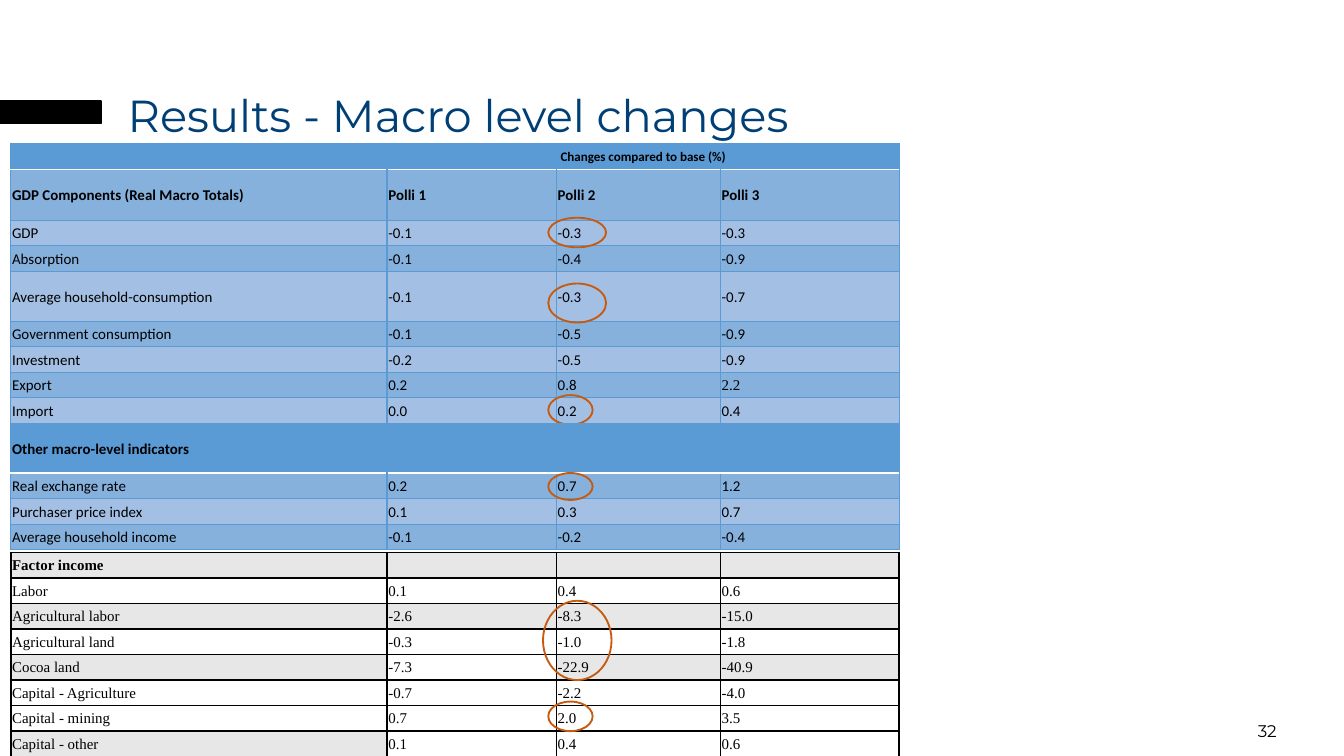
from lxml import etree
from pptx import Presentation
from pptx.dml.color import RGBColor
from pptx.enum.shapes import MSO_SHAPE
from pptx.enum.text import MSO_ANCHOR, MSO_AUTO_SIZE, PP_ALIGN
from pptx.oxml.ns import qn
from pptx.util import Inches, Pt

RECT, OVAL = MSO_SHAPE.RECTANGLE, MSO_SHAPE.OVAL
TOP, MIDDLE = MSO_ANCHOR.TOP, MSO_ANCHOR.MIDDLE
LEFT, CENTER, RIGHT, JUSTIFY = PP_ALIGN.LEFT, PP_ALIGN.CENTER, PP_ALIGN.RIGHT, PP_ALIGN.JUSTIFY
NO_FIT = MSO_AUTO_SIZE.NONE

THEME = {
    "title": {"name": "Montserrat", "size": 24, "color": "003F75"},
    "number": {"name": "Montserrat", "size": 9, "color": "000000"},
    "macro": {"name": "Calibri", "size": 8, "color": "000000"},
    "span": {"name": "Calibri", "size": 7, "color": "000000"},
    "factor": {"name": "Times New Roman", "size": 8, "color": "000000"},
    "black": "000000", "white": "FFFFFF", "grey": "E7E7E7",
    "blue": "5B9BD5", "mid": "86B1DD", "light": "A3C0E4", "ring": "C55A11",
}

TITLE = "Results - Macro level changes"
PAGE = "32"
SPAN_HEAD = "Changes compared to base (%)"
GDP = [
    ("", SPAN_HEAD, "", ""),
    ("GDP Components (Real Macro Totals)", "Polli 1", "Polli 2", "Polli 3"),
    ("GDP", "-0.1", "-0.3", "-0.3"),
    ("Absorption", "-0.1", "-0.4", "-0.9"),
    ("Average household-consumption", "-0.1", "-0.3", "-0.7"),
    ("Government consumption", "-0.1", "-0.5", "-0.9"),
    ("Investment", "-0.2", "-0.5", "-0.9"),
    ("Export", "0.2", "0.8", "2.2"),
    ("Import", "0.0", "0.2", "0.4"),
]
OTHER = [
    ("Other macro-level indicators", "", "", ""),
    ("Real exchange rate", "0.2", "0.7", "1.2"),
    ("Purchaser price index", "0.1", "0.3", "0.7"),
    ("Average household income", "-0.1", "-0.2", "-0.4"),
]
FACTOR = [
    ("Factor income", "", "", ""),
    ("Labor", "0.1", "0.4", "0.6"),
    ("Agricultural labor", "-2.6", "-8.3", "-15.0"),
    ("Agricultural land", "-0.3", "-1.0", "-1.8"),
    ("Cocoa land", "-7.3", "-22.9", "-40.9"),
    ("Capital - Agriculture", "-0.7", "-2.2", "-4.0"),
    ("Capital - mining", "0.7", "2.0", "3.5"),
    ("Capital - other", "0.1", "0.4", "0.6"),
]
CELL_FONTS = {SPAN_HEAD: THEME["span"], "2.2": THEME["factor"]}
FACTOR_GREY = {(r, c) for r in (0, 2, 4) for c in range(4)} - {(4, 1)} | {(7, 0)}
GDP_RINGS = [(4.08, 1.62, 0.43, 0.22), (4.08, 2.11, 0.43, 0.29), (4.08, 2.94, 0.33, 0.22)]
LOWER_RINGS = [(4.04, 4.47, 0.51, 0.59), (4.08, 5.22, 0.33, 0.22), (4.08, 3.52, 0.33, 0.2)]
COLS = (2.8, 1.26, 1.22, 1.33)
TABLE_LEFT, ROW = 0.08, 0.19


def write(tf, text, style, align, bold=False):
    p = tf.paragraphs[0]
    p.alignment = align
    if not text:
        end = etree.SubElement(p._p, qn("a:endParaRPr"))
        end.set("sz", str(style["size"] * 100))
        return
    r = p.add_run()
    r.text = text
    values = {"name": style["name"], "size": Pt(style["size"]), "bold": bold}
    for key, value in values.items():
        setattr(r.font, key, value)
    r.font.color.rgb = RGBColor.from_string(style["color"])


def frame(tf, margins):
    values = dict(zip(("margin_left", "margin_top", "margin_right", "margin_bottom"),
                      map(Inches, margins)))
    values.update(vertical_anchor=TOP, word_wrap=True, auto_size=NO_FIT)
    for key, value in values.items():
        setattr(tf, key, value)


def add_shape(s, kind, box, fill, line):
    sp = s.shapes.add_shape(kind, *map(Inches, box))
    sp.shadow.inherit = False
    if fill:
        sp.fill.solid()
        sp.fill.fore_color.rgb = RGBColor.from_string(fill)
    else:
        sp.fill.background()
    sp.line.color.rgb = RGBColor.from_string(line)
    sp.line.width = Pt(1)


def add_rings(s, rings):
    for box in rings:
        add_shape(s, OVAL, box, None, THEME["ring"])


def set_borders(cell, borders):
    tc_pr = cell._tc.get_or_add_tcPr()
    for side in "LRTB":
        color, width = borders[side]
        ln = etree.SubElement(tc_pr, qn("a:ln" + side), w=str(Pt(width)))
        fill = etree.SubElement(ln, qn("a:solidFill"))
        etree.SubElement(fill, qn("a:srgbClr"), val=color)


def macro_look(r, c):
    borders = dict.fromkeys("LRTB", (THEME["blue"], 0.5))
    if r == 0:
        borders["B"] = (THEME["white"], 1)
        return THEME["blue"], borders
    if r == 1:
        borders["T"] = (THEME["white"], 1)
    if c == 0:
        borders["R"] = (THEME["blue"], 1)
    if c == 1:
        borders["L"] = (THEME["blue"], 1)
    return THEME["mid" if r % 2 else "light"], borders


def factor_look(r, c):
    fill = THEME["grey" if (r, c) in FACTOR_GREY else "white"]
    return fill, dict.fromkeys("LRTB", (THEME["black"], 1))


def add_grid(s, rows, top, style, look, tall, bold_rows):
    heights = [tall.get(r, ROW) for r in range(len(rows))]
    table = s.shapes.add_table(len(rows), len(COLS), Inches(TABLE_LEFT), Inches(top),
                               Inches(sum(COLS)), Inches(sum(heights))).table
    table.first_row = table.horz_banding = False
    for col, width in zip(table.columns, COLS):
        col.width = Inches(width)
    for r, (row, height) in enumerate(zip(rows, heights)):
        table.rows[r].height = Inches(height)
        for c, text in enumerate(row):
            cell = table.cell(r, c)
            fill, borders = look(r, c)
            set_borders(cell, borders)
            cell.fill.solid()
            cell.fill.fore_color.rgb = RGBColor.from_string(fill)
            cell.margin_left = cell.margin_right = cell.margin_top = Inches(0.01)
            cell.margin_bottom = 0
            cell.vertical_anchor = MIDDLE
            align = CENTER if text == SPAN_HEAD else JUSTIFY
            write(cell.text_frame, text, CELL_FONTS.get(text, style), align, r in bold_rows)
    return table


def main():
    prs = Presentation()
    prs.slide_width = Inches(10)
    prs.slide_height = prs.slide_width * 9 // 16
    s = prs.slides.add_slide(prs.slide_layouts[5])

    number = s.shapes.add_textbox(*map(Inches, (8.99, 5.36, 0.51, 0.15)))
    frame(number.text_frame, (0, 0, 0, 0))
    write(number.text_frame, PAGE, THEME["number"], RIGHT)

    title = s.shapes.title
    title.left, title.top, title.width, title.height = map(Inches, (0.85, 0.6, 7.48, 0.47))
    frame(title.text_frame, (0.1, 0.05, 0.1, 0))
    write(title.text_frame, TITLE, THEME["title"], LEFT)

    add_shape(s, RECT, (0, 0.75, 0.75, 0.17), THEME["black"], THEME["black"])

    gdp = add_grid(s, GDP, 1.07, THEME["macro"], macro_look, {1: 0.38, 4: 0.37}, (0, 1))
    gdp.cell(0, 1).merge(gdp.cell(0, 3))
    add_rings(s, GDP_RINGS)
    add_grid(s, FACTOR, 4.11, THEME["factor"], factor_look, {}, (0,))
    add_grid(s, OTHER, 3.15, THEME["macro"], macro_look, {0: 0.37}, (0,))
    add_rings(s, LOWER_RINGS)

    prs.save("out.pptx")


if __name__ == "__main__":
    main()
